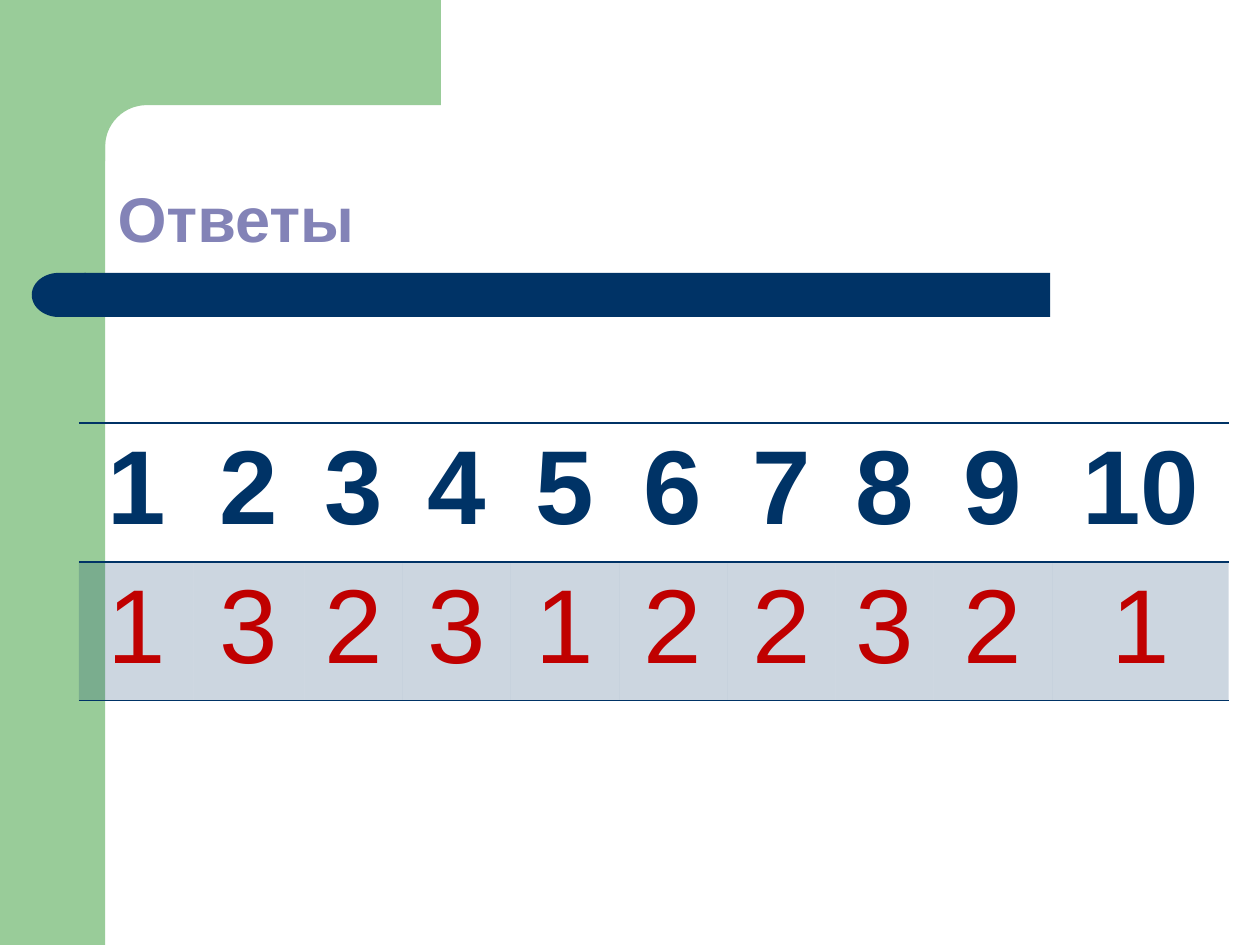
from math import cos, pi, sin

from lxml.etree import SubElement
from pptx import Presentation
from pptx.dml.color import RGBColor
from pptx.enum.shapes import MSO_SHAPE
from pptx.enum.text import MSO_ANCHOR, PP_ALIGN
from pptx.oxml.ns import qn
from pptx.util import Cm, Pt

GREEN = "99CC99"
NAVY = "003366"
LILAC = "8383B7"
RED = "C00000"
QUESTIONS = [str(number) for number in range(1, 11)]
ANSWERS = ["1", "3", "2", "3", "1", "2", "2", "3", "2", "1"]
COLUMN_WIDTHS = [2.31, 2.24, 1.98, 2.18, 2.18, 2.18, 2.18, 1.98, 2.39, 3.56]
ROW_HEIGHTS = [2.77, 2.62]


def color(hex_value):
    return RGBColor.from_string(hex_value)


def paint(shape, fill):
    shape.shadow.inherit = False
    shape.fill.solid()
    shape.fill.fore_color.rgb = color(fill)
    shape.line.fill.background()


def add_block(slide, kind, left, top, width, height, fill):
    block = slide.shapes.add_shape(kind, Cm(left), Cm(top), Cm(width), Cm(height))
    paint(block, fill)
    return block


def add_corner(slide):
    """Draw the green top band, which meets the side band in a concave quarter circle."""
    left, right, inner, band, bottom = 1.27, 8.89, 2.12, 2.12, 3.25
    radius, steps = 0.84, 16
    arc = []
    for step in range(steps + 1):
        angle = pi / 2 * step / steps
        arc.append((inner + radius * (1 - sin(angle)),
                    band + radius * (1 - cos(angle))))
    outline = [(right, band), *arc, (inner, bottom), (left, bottom), (left, 0)]
    builder = slide.shapes.build_freeform(Cm(right), 0, scale=1.0)
    builder.add_line_segments([(Cm(x), Cm(y)) for x, y in outline], close=True)
    paint(builder.convert_to_shape(), GREEN)


def write(frame, text, size, fill, bold=False, align=PP_ALIGN.LEFT, spacing=None):
    paragraph = frame.paragraphs[0]
    paragraph.alignment = align
    paragraph.line_spacing = spacing
    run = paragraph.add_run()
    run.text = text
    run.font.name = "Arial"
    run.font.size = Pt(size)
    run.font.bold = bold
    run.font.color.rgb = color(fill)


def add_title(slide, text):
    title = slide.shapes.add_textbox(Cm(2.12), Cm(2.12), Cm(22.01), Cm(3.17))
    title.text_frame.word_wrap = True
    title.text_frame.vertical_anchor = MSO_ANCHOR.BOTTOM
    write(title.text_frame, text, 36, LILAC, bold=True, spacing=0.9)


def rule_cell(cell):
    """Put navy lines above and below a cell and none at its sides."""
    properties = cell._tc.get_or_add_tcPr()
    for side in ("lnL", "lnR"):
        SubElement(SubElement(properties, qn(f"a:{side}"), w="0"), qn("a:noFill"))
    for side in ("lnT", "lnB"):
        line = SubElement(properties, qn(f"a:{side}"), w=str(Pt(1)))
        SubElement(SubElement(line, qn("a:solidFill")), qn("a:srgbClr"), val=NAVY)


def tint_cell(cell, fill, opacity):
    cell.fill.solid()
    cell.fill.fore_color.rgb = color(fill)
    tint = cell._tc.tcPr.find(f"{qn('a:solidFill')}/{qn('a:srgbClr')}")
    SubElement(tint, qn("a:alpha"), val=str(opacity * 1000))


def add_answer_table(slide):
    table = slide.shapes.add_table(
        len(ROW_HEIGHTS), len(COLUMN_WIDTHS), Cm(1.59), Cm(8.53),
        Cm(sum(COLUMN_WIDTHS)), Cm(sum(ROW_HEIGHTS))).table
    table.first_row = table.horz_banding = False
    for column, width in zip(table.columns, COLUMN_WIDTHS):
        column.width = Cm(width)
    for row, height in zip(table.rows, ROW_HEIGHTS):
        row.height = Cm(height)
    for index, (question, answer) in enumerate(zip(QUESTIONS, ANSWERS)):
        heading, result = table.cell(0, index), table.cell(1, index)
        rule_cell(heading)
        rule_cell(result)
        heading.fill.background()
        tint_cell(result, NAVY, 20)
        write(heading.text_frame, question, 60, NAVY, bold=True, align=PP_ALIGN.CENTER)
        write(result.text_frame, answer, 60, RED, align=PP_ALIGN.CENTER)


def main():
    deck = Presentation()
    deck.slide_width, deck.slide_height = Cm(25.4), Cm(19.05)
    slide = deck.slides.add_slide(deck.slide_layouts[6])
    add_block(slide, MSO_SHAPE.RECTANGLE, 0, 0, 2.12, 19.05, GREEN)
    add_corner(slide)
    add_block(slide, MSO_SHAPE.RECTANGLE, 1.7, 5.5, 19.47, 0.89, NAVY)
    bar_end = add_block(slide, MSO_SHAPE.FLOWCHART_DELAY, 0.64, 5.5, 1.09, 0.89, NAVY)
    bar_end.rotation = 180
    add_title(slide, "Ответы")
    add_answer_table(slide)
    deck.save("out.pptx")


if __name__ == "__main__":
    main()
